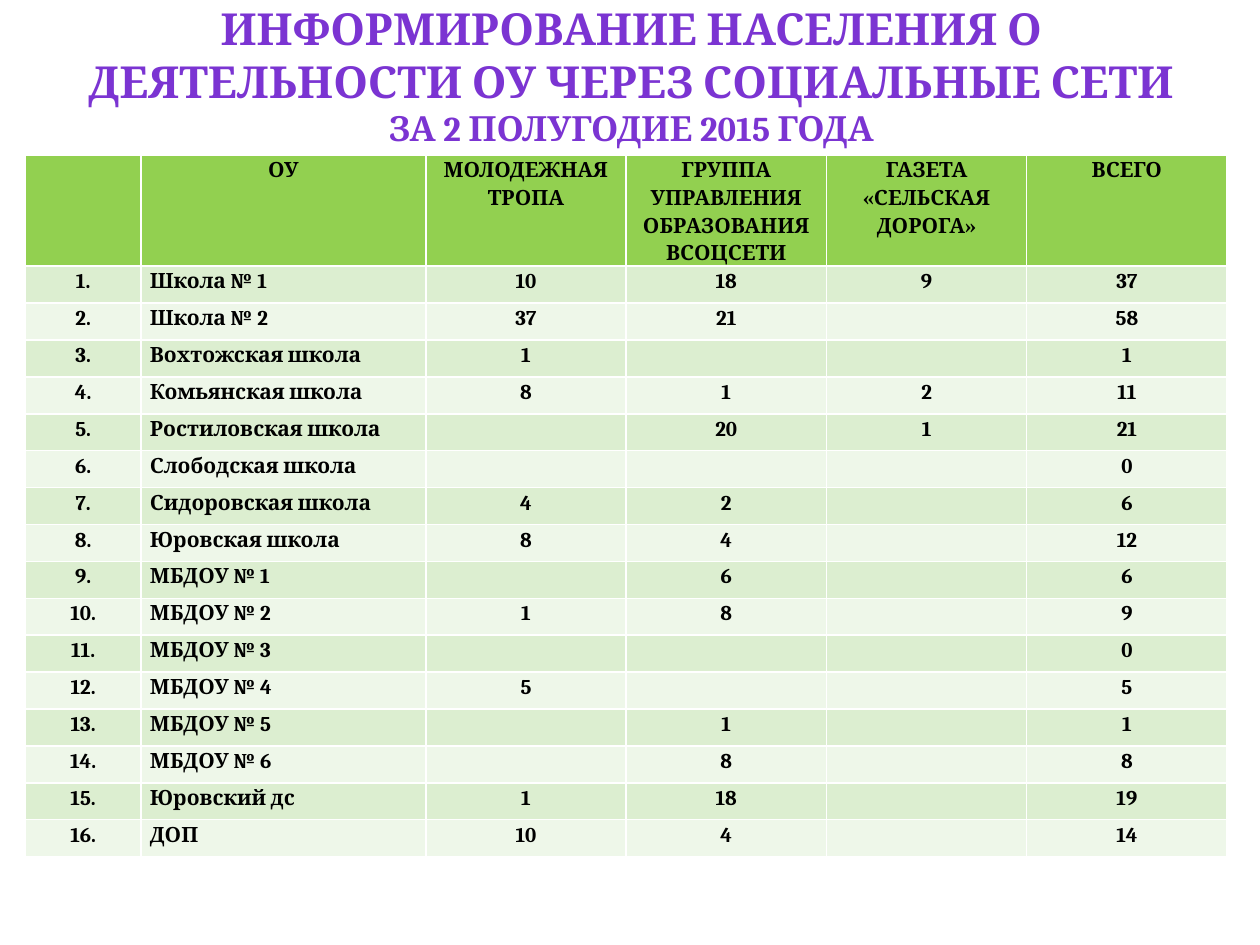
from pptx import Presentation
from pptx.dml.color import RGBColor
from pptx.enum.text import MSO_ANCHOR, MSO_AUTO_SIZE, PP_ALIGN
from pptx.util import Inches, Pt

PURPLE = RGBColor(0x7B, 0x34, 0xD2)
BLACK = RGBColor(0x00, 0x00, 0x00)
GREEN = RGBColor(0x92, 0xD0, 0x50)
BAND_DARK = RGBColor(0xDC, 0xEE, 0xD0)
BAND_LIGHT = RGBColor(0xEE, 0xF7, 0xE9)

HEADER = ["", "ОУ", "МОЛОДЕЖНАЯ ТРОПА", "ГРУППА УПРАВЛЕНИЯ ОБРАЗОВАНИЯ ВСОЦСЕТИ",
          "ГАЗЕТА\n«СЕЛЬСКАЯ ДОРОГА»", "ВСЕГО"]
SCHOOLS = [
    ("Школа № 1", 10, 18, 9, 37),
    ("Школа № 2", 37, 21, "", 58),
    ("Вохтожская школа", 1, "", "", 1),
    ("Комьянская школа", 8, 1, 2, 11),
    ("Ростиловская школа", "", 20, 1, 21),
    ("Слободская школа", "", "", "", 0),
    ("Сидоровская школа", 4, 2, "", 6),
    ("Юровская школа", 8, 4, "", 12),
    ("МБДОУ № 1", "", 6, "", 6),
    ("МБДОУ № 2", 1, 8, "", 9),
    ("МБДОУ № 3", "", "", "", 0),
    ("МБДОУ № 4", 5, "", "", 5),
    ("МБДОУ № 5", "", 1, "", 1),
    ("МБДОУ № 6", "", 8, "", 8),
    ("Юровский дс", 1, 18, "", 19),
    ("ДОП", 10, 4, "", 14),
]


def add_text(p, text, size=12, color=BLACK, align=PP_ALIGN.CENTER, spacing=None):
    p.alignment = align
    p.line_spacing = spacing
    if not text:
        p._p.get_or_add_endParaRPr().set("sz", str(size * 100))
        return
    r = p.add_run()
    r.text = text
    r.font.name = "Cambria"
    r.font.size = Pt(size)
    r.font.bold = True
    r.font.color.rgb = color


prs = Presentation()
prs.slide_width, prs.slide_height = Inches(10), Inches(7.5)
s = prs.slides.add_slide(prs.slide_layouts[5])

title = s.shapes.title
title.left, title.top = Inches(0.51), Inches(0.21)
title.width, title.height = Inches(9), Inches(0.77)
tf = title.text_frame
tf.word_wrap = True
tf.auto_size = MSO_AUTO_SIZE.NONE
tf.vertical_anchor = MSO_ANCHOR.MIDDLE
p = tf.paragraphs[0]
add_text(p, "ИНФОРМИРОВАНИЕ НАСЕЛЕНИЯ О ДЕЯТЕЛЬНОСТИ ОУ ЧЕРЕЗ СОЦИАЛЬНЫЕ СЕТИ ",
         size=25.2, color=PURPLE)
add_text(p, "ЗА 2 ПОЛУГОДИЕ 2015 ГОДА", size=19.8, color=PURPLE)

rows = [HEADER] + [(f"{n}.", *school) for n, school in enumerate(SCHOOLS, 1)]
table = s.shapes.add_table(len(rows), len(HEADER), Inches(0.2), Inches(1.23),
                           Inches(9.53), Inches(5.35)).table
for column, width in zip(table.columns, [0.92, 2.26] + [1.59] * 4):
    column.width = Inches(width)

for i, values in enumerate(rows):
    table.rows[i].height = Inches(4.69 / len(SCHOOLS) if i else 0.66)
    fill = GREEN if i == 0 else BAND_DARK if i % 2 else BAND_LIGHT
    for j, value in enumerate(values):
        cell = table.cell(i, j)
        cell.fill.solid()
        cell.fill.fore_color.rgb = fill
        cell.margin_left = cell.margin_right = Inches(0.07)
        cell.margin_top = cell.margin_bottom = 0
        align = PP_ALIGN.LEFT if i and j == 1 else PP_ALIGN.CENTER
        tf = cell.text_frame
        for k, line in enumerate(str(value).split("\n")):
            p = tf.add_paragraph() if k else tf.paragraphs[0]
            add_text(p, line, align=align, spacing=1.15)

prs.save("out.pptx")
